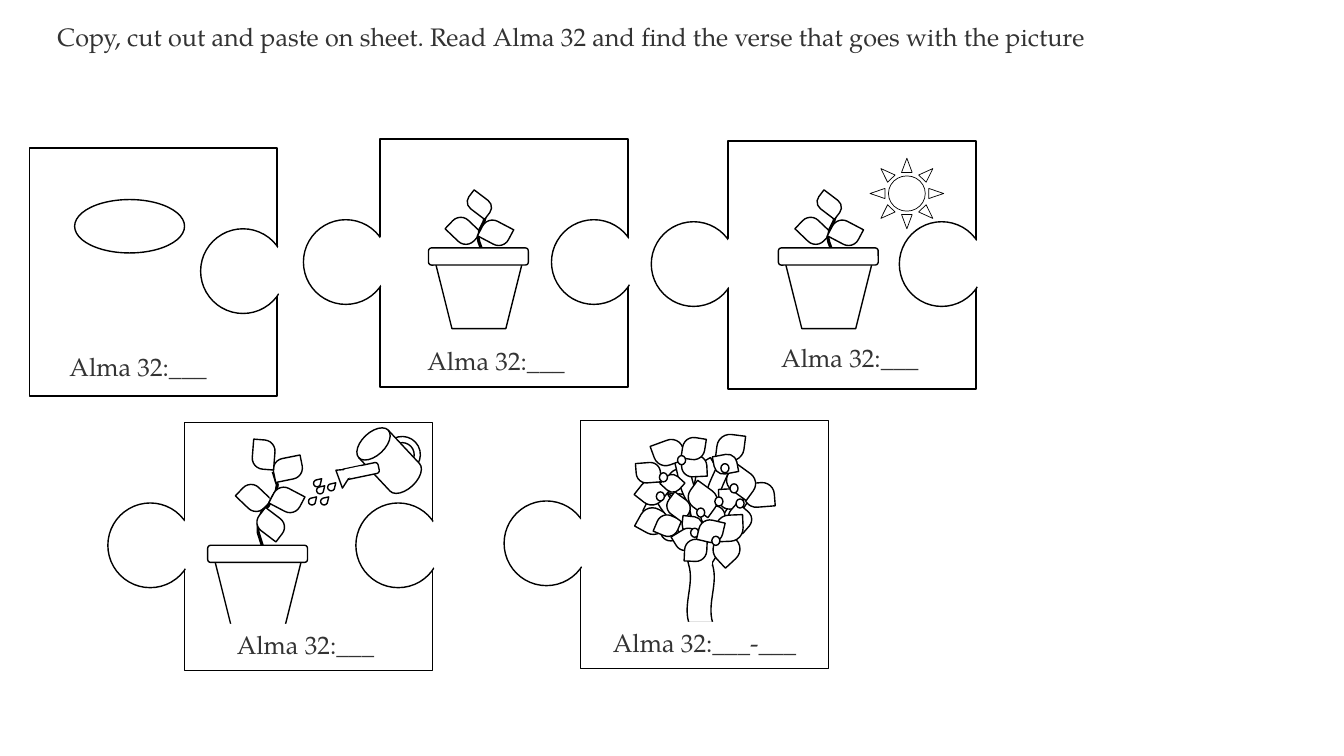
from dataclasses import dataclass

from pptx import Presentation
from pptx import util as u
from pptx.dml.color import RGBColor
from pptx.enum import shapes, text

G = shapes.MSO_SHAPE


@dataclass(frozen=True)
class Theme:
    paper: RGBColor = RGBColor(0xFF, 0xFF, 0xFF)
    outline: RGBColor = RGBColor(0, 0, 0)
    ink: RGBColor = RGBColor(0x33, 0x33, 0x33)
    font: str = "TeX Gyre Pagella"
    size: float = 18
    thin: float = 0.5
    line: float = 1
    thick: float = 2.25


T = Theme()
FONT = {"name": T.font, "size": u.Pt(T.size), "bold": False}
FRAME = {"word_wrap": False, "auto_size": text.MSO_AUTO_SIZE.NONE,
         "vertical_anchor": text.MSO_ANCHOR.TOP}

SIDE, KNOB = 2.46, 0.84
LEAF = [0.5, 0]

# Leaves, left, top, width, height in grid inches, then degrees
SPROUT_LOW_LEFT = (4.45, 2.18, 0.29, 0.22, 43.7)
SPROUT_FRONT = [(4.77, 2.2, 0.29, 0.22, 27.8)]
SPROUT_TOP = [(4.67, 1.9, 0.17, 0.26, 307.3)]
SPROUT_STEM = [(4.78, 2.59), (4.79, 2.56), (4.79, 2.51), (4.75, 2.4), (4.74, 2.35),
               (4.75, 2.34), (4.76, 2.28), (4.78, 2.24), (4.8, 2.2), (4.81, 2.16),
               (4.81, 2.12), (4.79, 2.03)]
TALL_STEM = [(2.59, 5.57), (2.61, 5.52), (2.61, 5.44), (2.56, 5.28), (2.56, 5.2),
             (2.57, 5.17), (2.6, 5.07), (2.66, 5.02), (2.7, 4.94), (2.74, 4.87),
             (2.75, 4.81), (2.71, 4.68)]
TALL_LEAVES = [(2.58, 5.06, 0.21, 0.29, 307.3), (2.71, 4.54, 0.29, 0.22, 348.6),
               (2.47, 4.4, 0.29, 0.22, 274.6)]
DROPS = [(3.14, 4.83), (3.25, 4.8), (3.11, 4.76), (3.06, 4.94), (3.18, 4.94)]

CROWN_BACK = [
    (7.06, 4.72, 0.24, 0.3, 85.5), (6.86, 4.59, 0.27, 0.26, 329.9),
    (6.62, 4.65, 0.27, 0.26, 10.4), (6.63, 4.9, 0.22, 0.22, 15.3),
    (6.42, 4.88, 0.27, 0.26, 26.4), (6.34, 5.04, 0.27, 0.26, 28.9),
    (6.57, 5.14, 0.2, 0.24, 71.7)]
BRANCHES = [
    (6.38, 5.47, 1.14, 0.27, 270), (6.2, 5.01, 0.95, 0.15, 235.5),
    (6.71, 5.17, 0.95, 0.15, 298.7), (6.59, 4.86, 0.95, 0.15, 289.4),
    (6.38, 4.84, 0.95, 0.15, 252.4)]
CROWN_MIDDLE = [
    (6.34, 4.76, 0.25, 0.25, 38.2), (7.11, 4.31, 0.27, 0.26, 187.3),
    (6.51, 4.34, 0.24, 0.3, 69.8), (6.58, 4.71, 0.18, 0.17, 42.2),
    (6.33, 4.57, 0.2, 0.24, 85.5), (6.78, 4.5, 0.21, 0.25, 87.1),
    (6.51, 5.11, 0.22, 0.21, 22.8), (6.63, 4.91, 0.2, 0.24, 126.4),
    (6.97, 5, 0.2, 0.24, 87.1), (6.85, 4.8, 0.24, 0.3, 126),
    (6.77, 4.34, 0.22, 0.22, 8.9), (7.15, 4.83, 0.2, 0.24, 87.1),
    (7.41, 4.76, 0.24, 0.3, 85.5), (7.23, 4.63, 0.24, 0.3, 126),
    (7.1, 4.49, 0.19, 0.23, 79.4), (7.24, 5.02, 0.2, 0.24, 130.9)]
BERRIES_MIDDLE = [(6.51, 4.88), (7.3, 4.95), (7.24, 4.8), (6.54, 4.69),
                  (6.72, 4.52), (7.15, 4.6), (6.91, 5.04), (7.09, 4.93)]
CROWN_LOW = [(6.78, 5.11, 0.17, 0.2, 276.1), (6.71, 5.23, 0.2, 0.24, 238.6)]
CROWN_FRONT = [
    (7.07, 5.32, 0.27, 0.26, 137.2), (7.1, 5.11, 0.27, 0.26, 177.7),
    (6.79, 5.35, 0.22, 0.22, 182.6), (6.93, 5.16, 0.24, 0.22, 193.2)]


def cm(inches):
    return u.Cm(inches * 2.54)


def set_all(obj, values):
    for name, value in values.items():
        setattr(obj, name, value)


def paint(sp, color=T.outline, width=T.line):
    """Fill with paper white; no outline when color is None."""
    sp.shadow.inherit = False
    sp.fill.solid()
    sp.fill.fore_color.rgb = T.paper
    if color is None:
        sp.line.fill.background()
    else:
        sp.line.color.rgb = color
        sp.line.width = u.Pt(width)


def add(s, kind, x, y, w, h, rot=0, adj=(), **line):
    sp = s.add_shape(kind, cm(x), cm(y), cm(w), cm(h))
    sp.rotation = rot
    for i, value in enumerate(adj):
        sp.adjustments[i] = value
    paint(sp, **line)


def leaves(s, items, dx=0, dy=0):
    for x, y, w, h, rot in items:
        add(s, G.ROUND_2_DIAG_RECTANGLE, x + dx, y + dy, w, h, rot, LEAF)


def berries(s, spots):
    for x, y in spots:
        add(s, G.OVAL, x, y, 0.08, 0.09)


def stem(s, points, dx=0):
    pts = [(cm(x + dx), cm(y)) for x, y in points]
    builder = s.build_freeform(*pts[0])
    builder.add_line_segments(pts[1:], close=False)
    paint(builder.convert_to_shape(), width=T.thick)


def pot(s, x, y):
    add(s, G.TRAPEZOID, x + 0.04, y + 0.03, 0.92, 0.77, 180)
    add(s, G.ROUNDED_RECTANGLE, x, y, 0.99, 0.17)


def write(sp, words):
    tf = sp.text_frame
    set_all(tf, FRAME)
    p = tf.paragraphs[0]
    p.alignment = text.PP_ALIGN.LEFT
    r = p.add_run()
    r.text = words
    set_all(r.font, FONT)
    r.font.color.rgb = T.ink


def label(s, words, x, y, w=1.62):
    sp = s.add_textbox(cm(x), cm(y), cm(w), cm(0.4))
    paint(sp, None)
    write(sp, words)


def puzzle_piece(slide, x, y, knob=True, socket=True):
    """Square with round joints; white discs open the square's edge at each joint."""
    s = slide.shapes.add_group_shape().shapes
    add(s, G.RECTANGLE, x, y, SIDE, SIDE)
    joints = [(-0.76, -0.06, knob), (1.7, 2.41, socket)]
    for disc, opening, present in joints:
        if present:
            add(s, G.OVAL, x + disc, y + 0.8, KNOB, KNOB)
            add(s, G.OVAL, x + opening, y + 0.79, KNOB, KNOB, color=T.paper)
    return s


def sprout(s, dx=0):
    leaves(s, [SPROUT_LOW_LEFT], dx)
    stem(s, SPROUT_STEM, dx)
    leaves(s, SPROUT_FRONT, dx)
    pot(s, 4.25 + dx, 2.46)
    leaves(s, SPROUT_TOP, dx)


def watering_can(s):
    add(s, G.DONUT, 3.81, 4.33, 0.36, 0.36, 316.9, [0.17])
    add(s, G.FLOWCHART_MAGNETIC_DISK, 3.66, 4.23, 0.4, 0.68, 316.9)
    add(s, G.ROUNDED_RECTANGLE, 3.52, 4.49, 0.11, 0.37, 258.2, [0.26])
    add(s, G.ISOSCELES_TRIANGLE, 3.28, 4.63, 0.23, 0.15, 302.6)
    add(s, G.ROUNDED_RECTANGLE, 3.46, 4.59, 0.09, 0.19, 258.2, [0.26], color=None)
    for x, y in DROPS:
        add(s, G.TEAR, x, y, 0.07, 0.07, adj=[1.29])


def tall_plant(s):
    leaves(s, [(2.37, 4.83, 0.29, 0.22, 43.7)])
    stem(s, TALL_STEM)
    leaves(s, [(2.7, 4.85, 0.29, 0.22, 27.8)])
    pot(s, 2.06, 5.41)
    leaves(s, TALL_LEAVES)


def tree(s):
    leaves(s, CROWN_BACK)
    for branch in BRANCHES:
        add(s, G.DOUBLE_WAVE, *branch)
    add(s, G.OVAL, 6.87, 5.22, 0.19, 0.67, color=None)
    leaves(s, CROWN_MIDDLE)
    berries(s, BERRIES_MIDDLE)
    leaves(s, CROWN_LOW)
    berries(s, [(6.85, 5.24)])
    leaves(s, CROWN_FRONT)
    berries(s, [(7.06, 5.32)])


def main():
    prs = Presentation()
    prs.slide_width, prs.slide_height = cm(13.33), cm(7.5)
    slide = prs.slides.add_slide(prs.slide_layouts[5])
    title = slide.shapes.title
    set_all(title, {"left": cm(0.47), "top": cm(0.16),
                    "width": cm(10.56), "height": cm(0.4)})
    write(title, "Copy, cut out and paste on sheet. Read Alma 32 and find "
                 "the verse that goes with the picture")

    s = puzzle_piece(slide, 0.29, 1.47, knob=False)
    add(s, G.OVAL, 0.74, 1.98, 1.09, 0.53)
    label(s, "Alma 32:___", 0.59, 3.44)

    s = puzzle_piece(slide, 3.77, 1.38)
    sprout(s)
    label(s, "Alma 32:___", 4.14, 3.38)

    s = puzzle_piece(slide, 7.22, 1.4)
    add(s, G.SUN, 8.63, 1.57, 0.73, 0.7, width=T.thin)
    sprout(s, 3.47)
    label(s, "Alma 32:___", 7.65, 3.35)

    s = puzzle_piece(slide, 1.83, 4.19)
    watering_can(s)
    tall_plant(s)
    label(s, "Alma 32:___", 2.25, 6.19)

    s = puzzle_piece(slide, 5.76, 4.17, socket=False)
    tree(s)
    label(s, "Alma 32:___-___", 5.98, 6.17, 2.12)

    prs.save("out.pptx")


if __name__ == "__main__":
    main()
